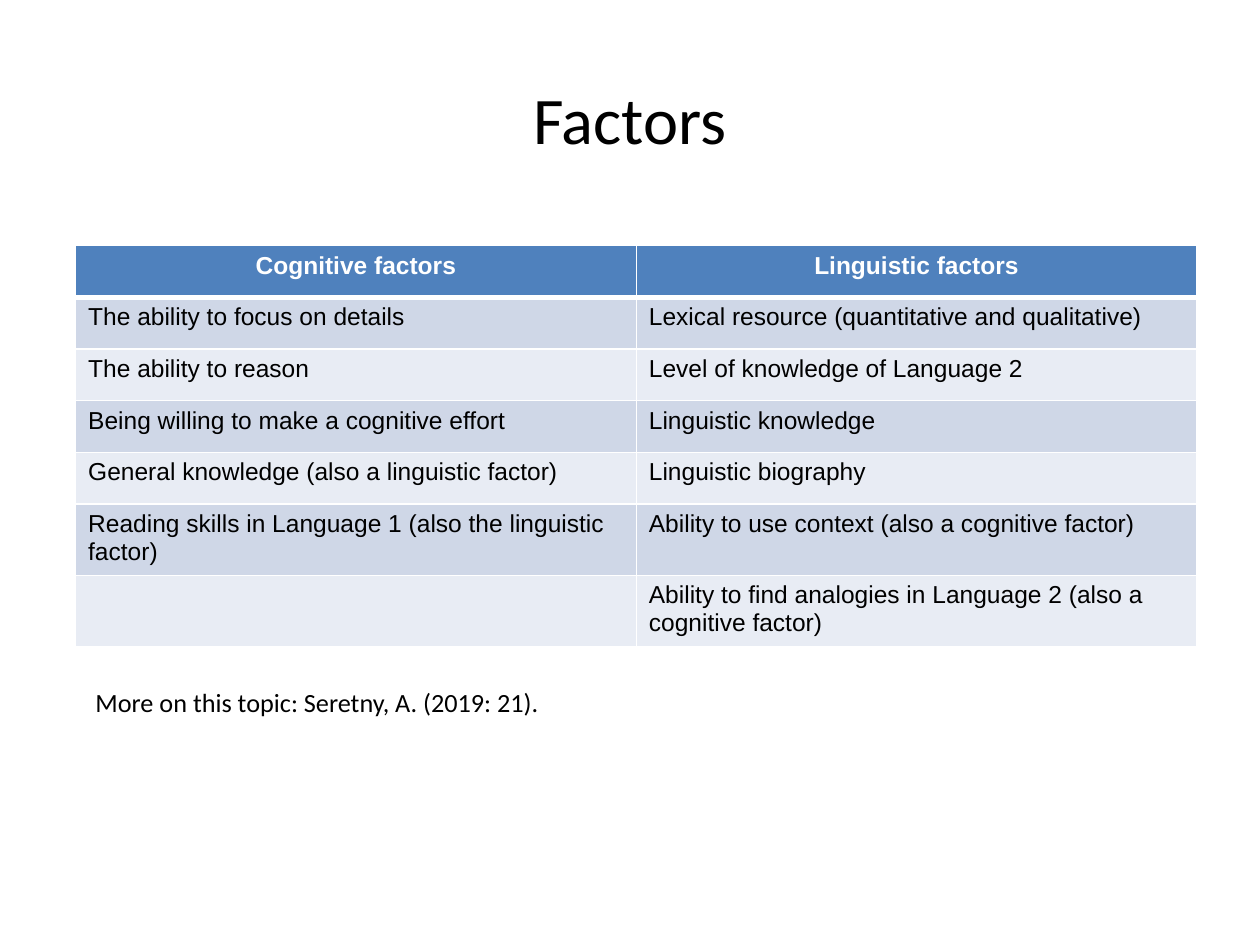
import pptx
import pptx.util
import pptx.dml.color
import pptx.enum.text
import lxml.etree

Inches, Pt = pptx.util.Inches, pptx.util.Pt
Align = pptx.enum.text.PP_ALIGN
Anchor = pptx.enum.text.MSO_ANCHOR

deck = pptx.Presentation()
deck.slide_width, deck.slide_height = Inches(10), Inches(7.5)
wide, high = deck.slide_width, deck.slide_height
slide = deck.slides.add_slide(deck.slide_layouts[6])


def color(code):
    return pptx.dml.color.RGBColor.from_string(code)


def write(frame, text, hue, align, form):
    para = frame.paragraphs[0]
    para.alignment = align
    font = para.font
    if text:
        run = para.add_run()
        run.text = text
        font = run.font
    for key, value in form.items():
        setattr(font, key, value)
    font.color.rgb = color(hue)


notes = [
    ("Factors", (0.05, 0.04, 0.9, 0.17), 38, Align.CENTER, Anchor.MIDDLE),
    ("More on this topic: Seretny, A. (2019: 21).",
     (0.066, 0.72, 0.88, 0.08), 15, Align.LEFT, Anchor.TOP),
]
for text, (left, top, width, height), size, align, anchor in notes:
    box = slide.shapes.add_textbox(
        int(wide * left), int(high * top), int(wide * width), int(high * height))
    box.text_frame.word_wrap = True
    box.text_frame.vertical_anchor = anchor
    write(box.text_frame, text, "000000", align,
          {"name": "Calibri", "size": Pt(size)})

rows = [
    ("Cognitive factors", "Linguistic factors"),
    ("The ability to focus on details",
     "Lexical resource (quantitative and qualitative)"),
    ("The ability to reason", "Level of knowledge of Language 2"),
    ("Being willing to make a cognitive effort", "Linguistic knowledge"),
    ("General knowledge (also a linguistic factor)", "Linguistic biography"),
    ("Reading skills in Language 1 (also the linguistic factor)",
     "Ability to use context (also a cognitive factor)"),
    ("", "Ability to find analogies in Language 2 (also a cognitive factor)"),
]
tall = [0.41] * 5 + [0.54] * 2
table = slide.shapes.add_table(
    len(rows), 2, int(wide * 0.06), int(high * 0.26),
    int(wide * 0.89), Inches(sum(tall))).table
for col in table.columns:
    col.width = int(wide * 0.445)

space = "http://schemas.openxmlformats.org/drawingml/2006/main"
for r, texts in enumerate(rows):
    table.rows[r].height = Inches(tall[r])
    head = r == 0
    fill = "4F81BD" if head else ("E8ECF4", "CFD7E7")[r % 2]
    thick = {"L": 1, "R": 1, "T": 3 if r == 1 else 1, "B": 3 if head else 1}
    for c, text in enumerate(texts):
        cell = table.cell(r, c)
        cell.fill.solid()
        cell.fill.fore_color.rgb = color(fill)
        write(cell.text_frame, text, "FFFFFF" if head else "000000",
              Align.CENTER if head else Align.LEFT,
              {"name": "Arial", "size": Pt(14), "bold": head})
        props = cell._tc.get_or_add_tcPr()
        for spot, (side, points) in enumerate(thick.items()):
            props.insert(spot, lxml.etree.fromstring(
                f'<a:ln{side} xmlns:a="{space}" w="{Pt(points)}"><a:solidFill>'
                f'<a:srgbClr val="FFFFFF"/></a:solidFill></a:ln{side}>'))

deck.save("out.pptx")
